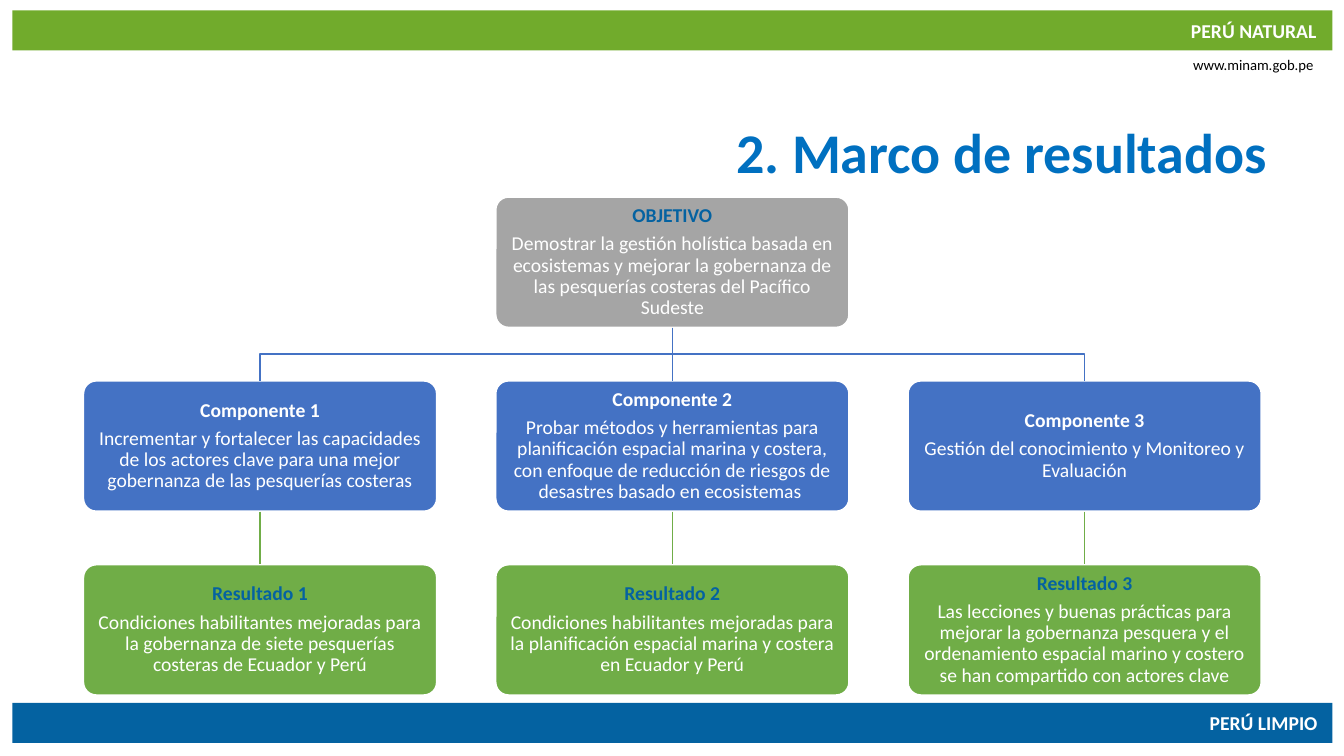
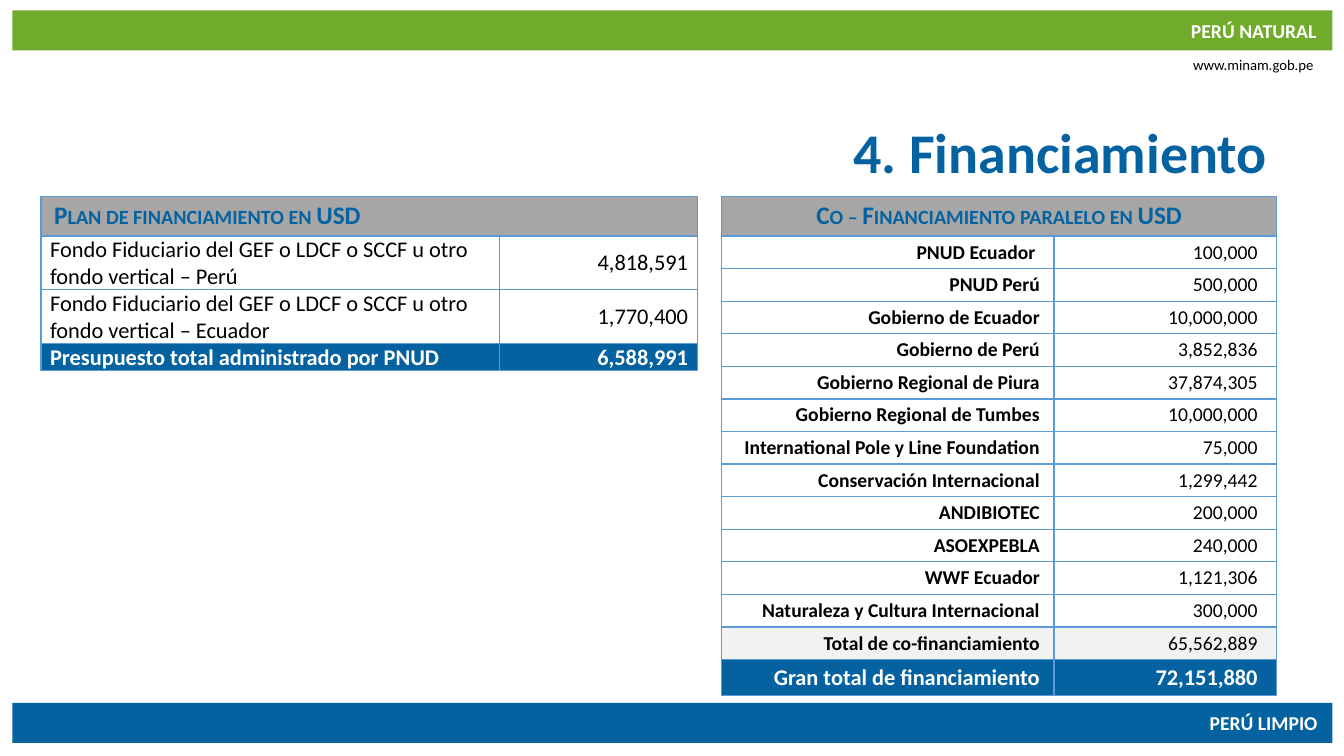
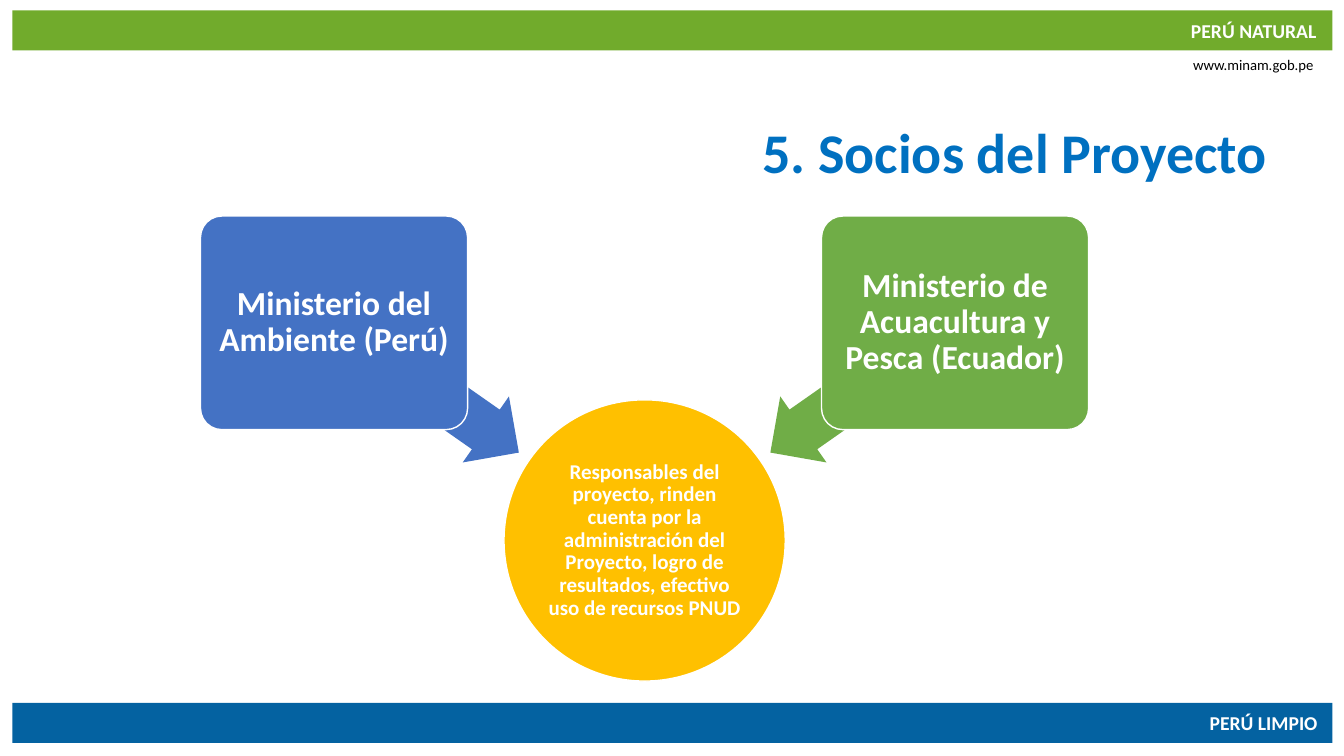
from lxml.etree import SubElement
from pptx import Presentation
from pptx.dml.color import RGBColor
from pptx.enum.shapes import MSO_CONNECTOR, MSO_SHAPE
from pptx.enum.text import MSO_ANCHOR, PP_ALIGN
from pptx.oxml.ns import qn
from pptx.util import Pt

FONT = "Calibri"
COLORS = {
    "white": "FFFFFF", "black": "000000", "navy": "0462A1", "title": "0070C0",
    "band": "71AB2C", "blue": "4472C4", "green": "70AD47", "gray": "A5A5A5",
    "gold": "FFC000", "header": "A6A6A6", "subtotal": "F2F2F2", "border": "5B9BD5",
}
LEFT, CENTER, RIGHT = PP_ALIGN.LEFT, PP_ALIGN.CENTER, PP_ALIGN.RIGHT

BANDS = [("band", 7.4), ("navy", 502)]
LABELS = [
    ("PERÚ NATURAL", (842.4, 10.1, 105.1, 24.5), 14, "white", True),
    ("PERÚ LIMPIO", (856.1, 504.5, 92.2, 24.5), 14, "white", True),
    ("www.minam.gob.pe", (843.1, 36.3, 102.2, 20.2), 10.5, "black", False),
]

OBJECTIVE = ("OBJETIVO", "Demostrar la gestión holística basada en ecosistemas y mejorar "
             "la gobernanza de las pesquerías costeras del Pacífico Sudeste")
COMPONENTS = [
    ("Componente 1", "Incrementar y fortalecer las capacidades de los actores clave para "
     "una mejor gobernanza de las pesquerías costeras"),
    ("Componente 2", "Probar métodos y herramientas para planificación espacial marina y "
     "costera, con enfoque de reducción de riesgos de desastres basado en ecosistemas "),
    ("Componente 3", "Gestión del conocimiento y Monitoreo y Evaluación"),
]
RESULTS = [
    ("Resultado 1", "Condiciones habilitantes mejoradas para la gobernanza de siete "
     "pesquerías costeras de Ecuador y Perú"),
    ("Resultado 2", "Condiciones habilitantes mejoradas para la planificación espacial "
     "marina y costera en Ecuador y Perú"),
    ("Resultado 3", "Las lecciones y buenas prácticas para mejorar la gobernanza pesquera y "
     "el ordenamiento espacial marino y costero se han compartido con actores clave"),
]

COFINANCING = [
    ("PNUD Ecuador ", "100,000"),
    ("PNUD Perú", "500,000"),
    ("Gobierno de Ecuador", "10,000,000"),
    ("Gobierno de Perú", "3,852,836"),
    ("Gobierno Regional de Piura", "37,874,305"),
    ("Gobierno Regional de Tumbes", "10,000,000"),
    ("International Pole y Line Foundation", "75,000"),
    ("Conservación Internacional", "1,299,442"),
    ("ANDIBIOTEC", "200,000"),
    ("ASOEXPEBLA", "240,000"),
    ("WWF Ecuador", "1,121,306"),
    ("Naturaleza y Cultura Internacional", "300,000"),
    ("Total de co-financiamiento", "65,562,889"),
    ("Gran total de financiamiento", "72,151,880"),
]
FUND = "Fondo Fiduciario del GEF o LDCF o SCCF u otro fondo vertical – "
PLAN = [
    (FUND + "Perú", "4,818,591"),
    (FUND + "Ecuador", "1,770,400"),
    ("Presupuesto total administrado por PNUD", "6,588,991"),
]

PARTNERS = [
    ("Ministerio del Ambiente (Perú)", "blue", 143.2, 223.9, 215),
    ("Ministerio de Acuacultura y Pesca (Ecuador)", "green", 586.8, 535.7, 325),
]
ROLE = ("Responsables del proyecto, rinden cuenta por la administración del Proyecto, "
        "logro de resultados, efectivo uso de recursos PNUD")


def rgb(name):
    return RGBColor.from_string(COLORS[name])


def add_run(p, text, size, color, bold=False):
    r = p.add_run()
    r.text = text
    r.font.name, r.font.size, r.font.bold = FONT, Pt(size), bold
    r.font.color.rgb = rgb(color)
    return r


def set_margins(frame, x, y):
    frame.margin_left = frame.margin_right = Pt(x)
    frame.margin_top = frame.margin_bottom = Pt(y)


def add_text(s, box, text, size, color, bold, wrap):
    tf = s.shapes.add_textbox(*map(Pt, box)).text_frame
    tf.word_wrap = wrap
    p = tf.paragraphs[0]
    p.alignment = RIGHT
    add_run(p, text, size, color, bold)
    return p


def add_shape(s, kind, box, fill, line=0):
    sp = s.shapes.add_shape(kind, *map(Pt, box))
    sp.shadow.inherit = False
    sp.fill.solid()
    sp.fill.fore_color.rgb = rgb(fill)
    if line:
        sp.line.color.rgb = rgb("white")
        sp.line.width = Pt(line)
    else:
        sp.line.fill.background()
    return sp


def fill_text(sp, margin, size, paragraphs):
    tf = sp.text_frame
    tf.word_wrap = True
    tf.vertical_anchor = MSO_ANCHOR.MIDDLE
    set_margins(tf, margin, margin)
    for i, (text, color, bold) in enumerate(paragraphs):
        p = tf.add_paragraph() if i else tf.paragraphs[0]
        p.alignment, p.line_spacing = CENTER, 0.9
        if i:
            p.space_before = Pt(0.35 * size)
        add_run(p, text, size, color, bold)


def add_link(s, color, upper, lower, x, top, bottom):
    c = s.shapes.add_connector(MSO_CONNECTOR.STRAIGHT, Pt(x), Pt(top), Pt(x), Pt(bottom))
    c.line.color.rgb = rgb(color)
    c.line.width = Pt(1)
    SubElement(c._element.spPr, qn("a:effectLst"))
    c.begin_connect(upper, 2)
    c.end_connect(lower, 0)


def add_branch(s, color, points):
    start, *rest = [(Pt(x), Pt(y)) for x, y in points]
    builder = s.shapes.build_freeform(*start)
    builder.add_line_segments(rest, close=False)
    sp = builder.convert_to_shape()
    sp.shadow.inherit = False
    sp.fill.background()
    sp.line.color.rgb = rgb(color)
    sp.line.width = Pt(1)


def add_base(prs, title, color):
    s = prs.slides.add_slide(prs.slide_layouts[6])
    for fill, top in BANDS:
        add_shape(s, MSO_SHAPE.RECTANGLE, (8.8, top, 943, 28.6), fill)
    for text, box, size, ink, bold in LABELS:
        add_text(s, box, text, size, ink, bold, False)
    add_text(s, (48, 85.7, 864, 42.5), title, 40, color, True, True).line_spacing = 0.9
    return s


def set_cell(cell, text, size, color, bold, align, fill, margins):
    cell.vertical_anchor = MSO_ANCHOR.MIDDLE
    set_margins(cell, *margins)
    tcPr = cell._tc.get_or_add_tcPr()
    for side in ("lnL", "lnR", "lnT", "lnB"):
        ln = SubElement(tcPr, qn(f"a:{side}"), w=str(Pt(1)))
        solid = SubElement(ln, qn("a:solidFill"))
        SubElement(solid, qn("a:srgbClr"), val=COLORS["border"])
    cell.fill.solid()
    cell.fill.fore_color.rgb = rgb(fill)
    p = cell.text_frame.paragraphs[0]
    p.alignment = align
    if text:
        return add_run(p, text, size, color, bold)
    p.font.size = Pt(size)


def add_finance_table(s, left, widths, heights, header, header_align, header_margins,
                      rows, size, label_bold, label_align, margins, subtotal=None):
    last = len(widths) - 1
    frame = s.shapes.add_table(len(rows) + 1, len(widths), Pt(left), Pt(140.4),
                               Pt(sum(widths)), Pt(sum(heights)))
    table = frame.table
    table.first_row = table.horz_banding = False
    for column, width in zip(table.columns, widths):
        column.width = Pt(width)
    for row, height in zip(table.rows, heights):
        row.height = Pt(height)
    for j in range(last + 1):
        r = set_cell(table.cell(0, j), "" if j else header, 18, "navy", True,
                     header_align, "header", header_margins)
        if r:
            r._r.get_or_add_rPr().set("cap", "small")
    table.cell(0, 0).merge(table.cell(0, last))
    for i, (label, amount) in enumerate(rows, 1):
        total = i == len(rows)
        fill = "navy" if total else "subtotal" if i == subtotal else "white"
        color = "white" if total else "black"
        for j in range(last + 1):
            text = amount if j == last else "" if j else label
            bold = total or (label_bold and j < last)
            set_cell(table.cell(i, j), text, 16 if total else size, color, bold,
                     RIGHT if j == last else label_align, fill, margins[j == last])
        if last > 1:
            table.cell(i, 0).merge(table.cell(i, last - 1))


def build_results(prs):
    s = add_base(prs, "2. Marco de resultados", "title")
    left, top, width, height = 59.4, 140.6, 252.7, 93.5
    step_x, step_y = 294.5, 131.3

    def add_box(column, row, fill, heading_color, content):
        sp = add_shape(s, MSO_SHAPE.ROUNDED_RECTANGLE,
                       (left + column * step_x, top + row * step_y, width, height), fill, 1.5)
        sp.adjustments[0] = 0.1
        heading, body = content
        fill_text(sp, 4.2, 14, [(heading, heading_color, True), (body, "white", False)])
        return sp

    objective = add_box(1, 0, "gray", "navy", OBJECTIVE)
    components = [add_box(i, 1, "blue", "white", c) for i, c in enumerate(COMPONENTS)]
    results = [add_box(i, 2, "green", "navy", c) for i, c in enumerate(RESULTS)]

    centers = [left + width / 2 + i * step_x for i in range(3)]
    bottoms = [top + height + i * step_y for i in range(2)]
    tops = [top + i * step_y for i in (1, 2)]
    middle, bus = centers[1], (bottoms[0] + tops[0]) / 2
    for x in (centers[0], centers[2]):
        add_branch(s, "blue", [(middle, bottoms[0]), (middle, bus), (x, bus), (x, tops[0])])
    add_link(s, "blue", objective, components[1], middle, bottoms[0], tops[0])
    for component, result, x in zip(components, results, centers):
        add_link(s, "green", component, result, x, bottoms[1], tops[1])


def build_financing(prs):
    s = add_base(prs, "4. Financiamiento", "navy")
    add_finance_table(s, 515.3, (237.6, 159.1), [28.2] + [23.3] * 13 + [25.2],
                      "Co – Financiamiento paralelo en USD", CENTER, (13.7, 3.1),
                      COFINANCING, 14, True, RIGHT, ((10.1, 0), (13.7, 3.1)), subtotal=13)
    add_finance_table(s, 29.3, (280.8, 46.8, 141.1), (28.2, 38.5, 38.5, 19.2),
                      "Plan de financiamiento en USD", LEFT, (9.4, 3.1),
                      PLAN, 16, False, LEFT, ((6.5, 0), (6.5, 0)))


def build_partners(prs):
    s = add_base(prs, "5. Socios del Proyecto", "title")
    circle = add_shape(s, MSO_SHAPE.OVAL, (360, 285.6, 200.9, 200.9), "gold", 1)
    fill_text(circle, 0.7, 15, [(ROLE, "white", True)])
    for name, fill, box_left, arrow_left, angle in PARTNERS:
        arrow = add_shape(s, MSO_SHAPE.LEFT_ARROW, (arrow_left, 248.2, 161.3, 57.6), fill)
        arrow.adjustments[0], arrow.adjustments[1] = 0.6, 0.5
        arrow.rotation = angle
        box = add_shape(s, MSO_SHAPE.ROUNDED_RECTANGLE,
                        (box_left, 154.3, 190.8, 152.6), fill, 1)
        box.adjustments[0] = 0.1
        fill_text(box, 3.6, 24, [(name, "white", True)])


def main():
    prs = Presentation()
    prs.slide_width, prs.slide_height = Pt(960), Pt(540)
    build_results(prs)
    build_financing(prs)
    build_partners(prs)
    prs.save("out.pptx")


if __name__ == "__main__":
    main()
